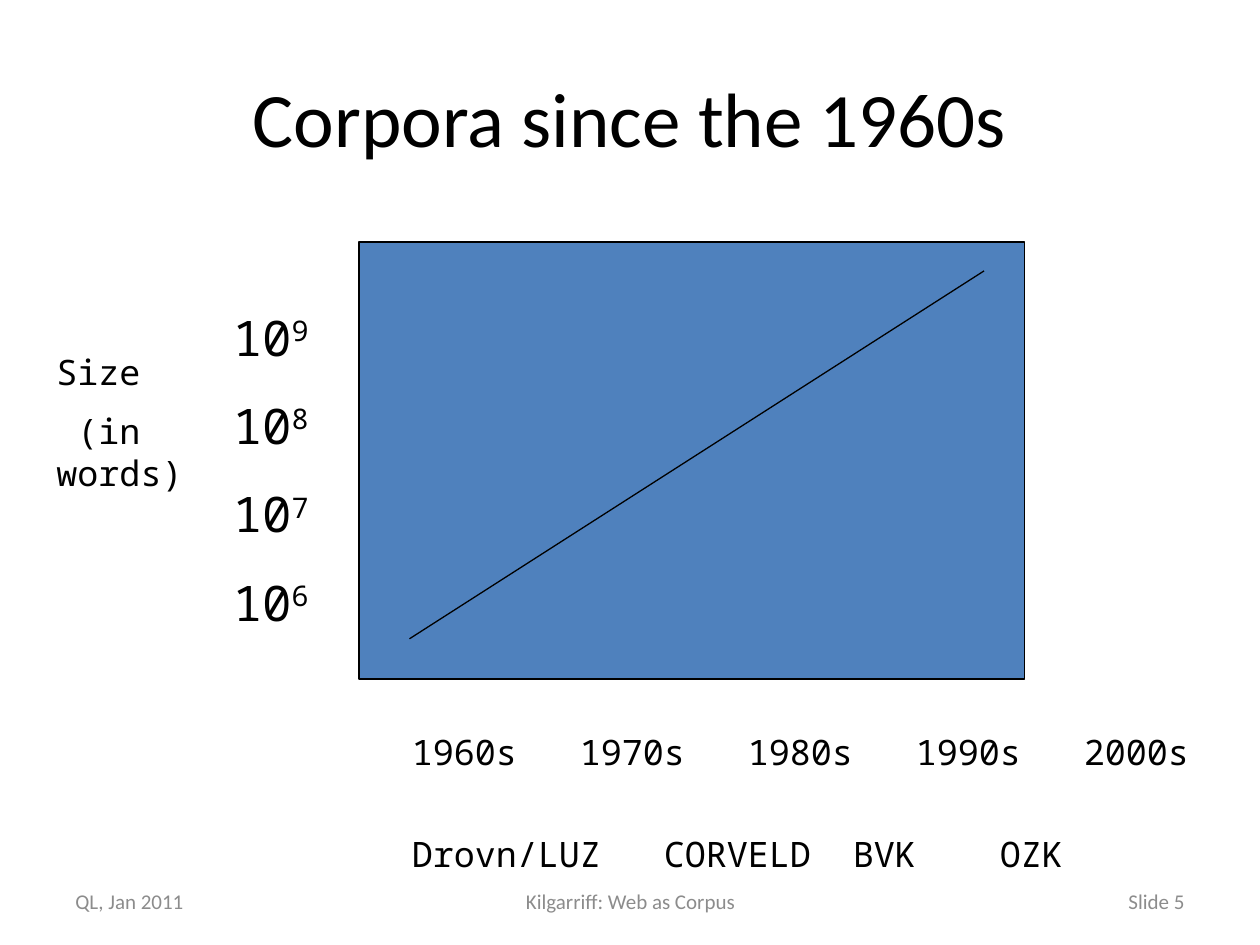
"""Build the slide on corpus sizes since the 1960s."""
from pptx import Presentation, util as u
from pptx.dml.color import RGBColor
from pptx.enum import shapes, text
from pptx.oxml import xmlchemy as xml

BLACK = RGBColor(0, 0, 0)
GREY = RGBColor(0x8C, 0x8C, 0x8C)
BLUE = RGBColor(0x4F, 0x81, 0xBD)
SANS, MONO = "Calibri", "Noto Sans Mono"
LEFT, MID, RIGHT = text.PP_ALIGN.LEFT, text.PP_ALIGN.CENTER, text.PP_ALIGN.RIGHT

TITLE = "Corpora since the 1960s"
POWERS = ["9", "8", "7", "6"]
LABEL = ["Size", " (in words)"]
CHAR = 1 / 6
ROWS = [
    (["1960s", "1970s", "1980s", "1990s", "2000s"], [8, 16, 24, 32], 0),
    (["Drovn/LUZ", "CORVELD", "BVK", "OZK"], [12, 21, 28], 34),
]
FOOT = [
    ("QL, Jan 2011", 0.5, 2.33, LEFT),
    ("Kilgarriff: Web as Corpus", 3.42, 3.17, MID),
    ("Slide 5", 7.17, 2.33, RIGHT),
]


def place(shape, x, y, w, h):
    shape.left, shape.top, shape.width, shape.height = map(u.Inches, (x, y, w, h))


def add_box(home, x, y, w, h, anchor=text.MSO_ANCHOR.TOP):
    frame = home.add_textbox(*map(u.Inches, (x, y, w, h))).text_frame
    frame.word_wrap = True
    frame.vertical_anchor = anchor
    return frame


def add_par(frame, first, gap=0, align=LEFT):
    par = frame.paragraphs[0] if first else frame.add_paragraph()
    par.alignment = align
    par.space_before = u.Pt(gap)
    return par


def add_run(par, words, size, font=MONO, color=BLACK):
    run = par.add_run()
    run.text = words
    run.font.size = u.Pt(size)
    run.font.name = font
    run.font.color.rgb = color
    return run


def add_tabs(par, stops):
    tabs = xml.OxmlElement("a:tabLst")
    for stop in stops:
        tab = xml.OxmlElement("a:tab")
        tab.set("pos", str(u.Inches(stop * CHAR)))
        tab.set("algn", "l")
        tabs.append(tab)
    par._p.get_or_add_pPr().append(tabs)


def add_plot(slide):
    group = slide.shapes.add_group_shape().shapes
    area = group.add_shape(shapes.MSO_SHAPE.RECTANGLE,
                           *map(u.Inches, (2.85, 1.92, 5.28, 3.47)))
    area.shadow.inherit = False
    area.fill.solid()
    area.fill.fore_color.rgb = BLUE
    trend = group.add_connector(shapes.MSO_CONNECTOR.STRAIGHT,
                                *map(u.Inches, (3.25, 5.07, 7.81, 2.15)))
    for shape in (area, trend):
        shape.line.color.rgb = BLACK
        shape.line.width = u.Pt(0.75)
    trend._element.spPr.append(xml.OxmlElement("a:effectLst"))
    scale = add_box(group, 1.75, 2.39, 1.18, 2.81)
    for i, power in enumerate(POWERS):
        par = add_par(scale, i == 0, 16.8)
        add_run(par, "10", 28)
        add_run(par, power, 28).font._element.set("baseline", "30000")


def main():
    deck = Presentation()
    deck.slide_width, deck.slide_height = u.Inches(10), u.Inches(7.5)
    slide = deck.slides.add_slide(deck.slide_layouts[5])

    for words, x, w, align in FOOT:
        frame = add_box(slide.shapes, x, 6.95, w, 0.4, text.MSO_ANCHOR.MIDDLE)
        add_run(add_par(frame, True, 0, align), words, 12, SANS, GREY)

    title = slide.shapes.title
    place(title, 0.5, 0.3, 9, 1.25)
    title.text_frame.vertical_anchor = text.MSO_ANCHOR.MIDDLE
    add_run(add_par(title.text_frame, True, 0, MID), TITLE, 44, SANS)

    add_plot(slide)

    label = add_box(slide.shapes, 0.35, 2.73, 1.34, 1.28)
    for i, words in enumerate(LABEL):
        add_run(add_par(label, i == 0, 10), words, 20)

    table = add_box(slide.shapes, 3.17, 5.75, 6.67, 0.94)
    for i, (names, stops, gap) in enumerate(ROWS):
        par = add_par(table, i == 0, gap)
        add_tabs(par, stops)
        add_run(par, "\t".join(names), 20)

    deck.save("out.pptx")


if __name__ == "__main__":
    main()
